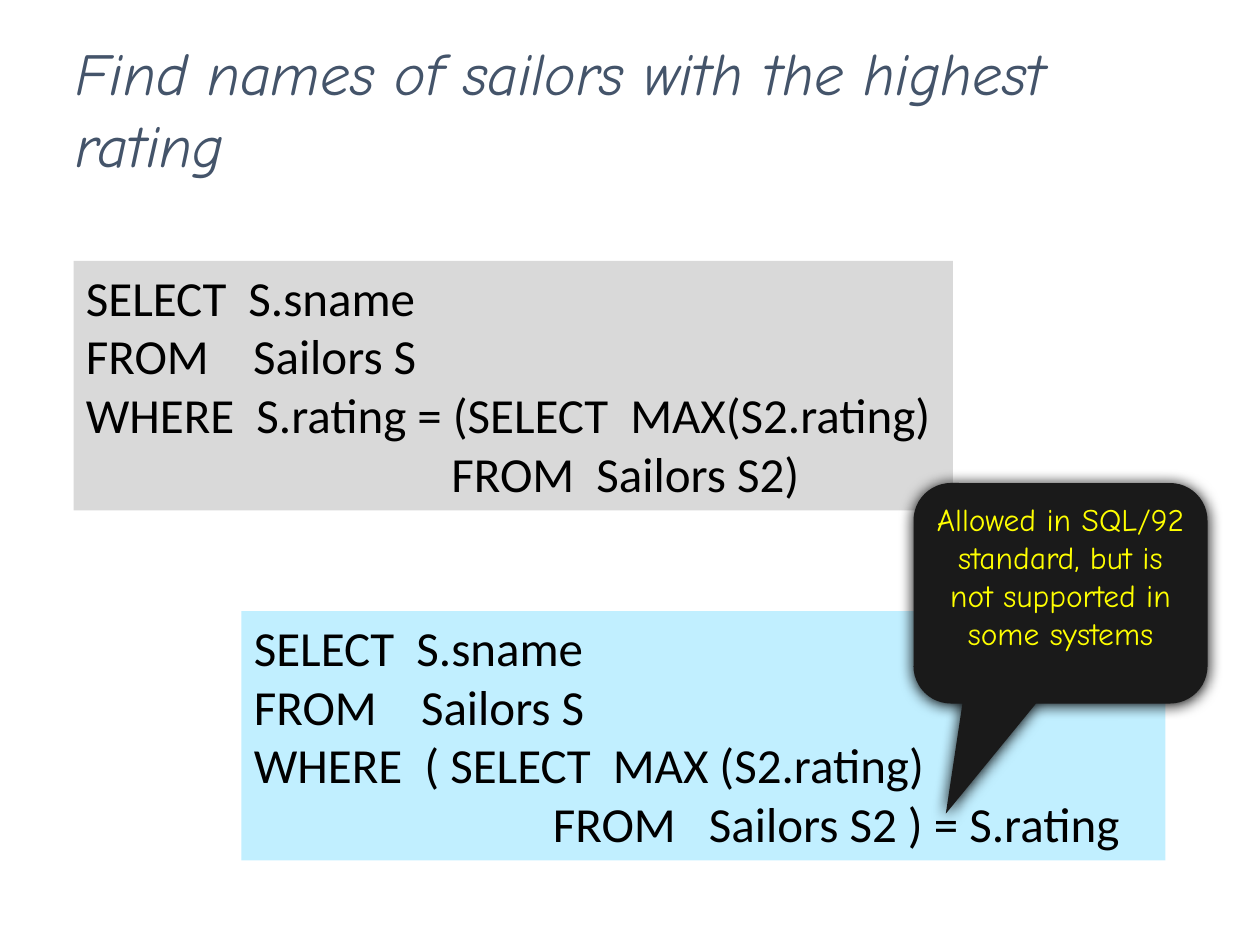
import lxml.etree
import pptx
import pptx.dml.color
import pptx.enum.shapes
import pptx.enum.text
import pptx.oxml.ns
import pptx.util

COLUMNS, ROWS = 120, 90
CELL = pptx.util.Inches(1 / 12)
SHAPES = pptx.enum.shapes.MSO_SHAPE
ANCHOR = pptx.enum.text.MSO_ANCHOR
ALIGN = pptx.enum.text.PP_ALIGN

DIRECT_QUERY = [
    "SELECT  S.sname",
    "FROM    Sailors S",
    "WHERE  S.rating = (SELECT  MAX(S2.rating)",
    "                                 FROM  Sailors S2)",
]
REVERSED_QUERY = [
    "SELECT  S.sname",
    "FROM    Sailors S",
    "WHERE  ( SELECT  MAX (S2.rating)",
    "                           FROM   Sailors S2 ) = S.rating",
]


def color(value):
    """Turn a hex string into a colour."""
    return pptx.dml.color.RGBColor.from_string(value)


def place(box):
    """Turn a box in grid columns and rows into slide lengths."""
    return [pptx.util.Emu(round(part * CELL)) for part in box]


def write(shape, lines, font, size, ink, align=ALIGN.LEFT, anchor=ANCHOR.TOP,
          italic=None, wrap=True):
    """Fill a shape with one paragraph for each line."""
    frame = shape.text_frame
    frame.word_wrap = wrap
    frame.vertical_anchor = anchor
    frame.text = "\n".join(lines)
    for para in frame.paragraphs:
        para.alignment = align
        para.font.name = font
        para.font.size = pptx.util.Pt(size)
        para.font.italic = italic
        para.font.color.rgb = color(ink)


def add_panel(page, kind, box, fill):
    """Add a plain filled shape without outline or shadow."""
    shape = page.shapes.add_shape(kind, *place(box))
    shape.shadow.inherit = False
    shape.fill.solid()
    shape.fill.fore_color.rgb = color(fill)
    shape.line.fill.background()
    return shape


def add_title(page, box, title):
    """Add the slide title."""
    shape = page.shapes.add_textbox(*place(box))
    write(shape, [title], "Comic Neue", 34, "44546A",
          anchor=ANCHOR.MIDDLE, italic=True)


def add_query(page, box, lines, fill, wrap=True):
    """Add a coloured panel with an SQL query."""
    panel = add_panel(page, SHAPES.RECTANGLE, box, fill)
    write(panel, lines, "Calibri", 28, "000000", wrap=wrap)


def add_shadow(shape, blur, distance, angle):
    """Give a shape a black outer shadow."""
    qn = pptx.oxml.ns.qn
    effects = shape.element.spPr.find(qn("a:effectLst"))
    shadow = lxml.etree.SubElement(
        effects, qn("a:outerShdw"), blurRad=str(pptx.util.Pt(blur)),
        dist=str(pptx.util.Pt(distance)), dir=str(angle * 60000),
        rotWithShape="0")
    lxml.etree.SubElement(shadow, qn("a:srgbClr"), val="000000")


def add_callout(page, box, remark):
    """Add the speech bubble that points at the second query."""
    bubble = add_panel(page, SHAPES.ROUNDED_RECTANGULAR_CALLOUT, box, "1A1A1A")
    for index, value in enumerate((-0.39, 1, 0.17)):
        bubble.adjustments[index] = value
    add_shadow(bubble, blur=8.5, distance=1, angle=90)
    write(bubble, [remark], "Comic Neue", 18, "FFFF00", align=ALIGN.CENTER)


def main():
    """Build and save the slide."""
    deck = pptx.Presentation()
    deck.slide_width = COLUMNS * CELL
    deck.slide_height = ROWS * CELL
    page = deck.slides.add_slide(deck.slide_layouts[6])
    add_query(page, (23, 58.2, 88, 23.75), REVERSED_QUERY, "C1EFFF")
    add_query(page, (7, 24.85, 83.75, 23.75), DIRECT_QUERY, "D9D9D9", wrap=False)
    add_callout(page, (87, 46, 28, 21),
                "Allowed in SQL/92 standard, but is not supported in some systems")
    add_title(page, (6, 3, 110, 14.5),
              "Find names of sailors with the highest rating")
    deck.save("out.pptx")


if __name__ == "__main__":
    main()
